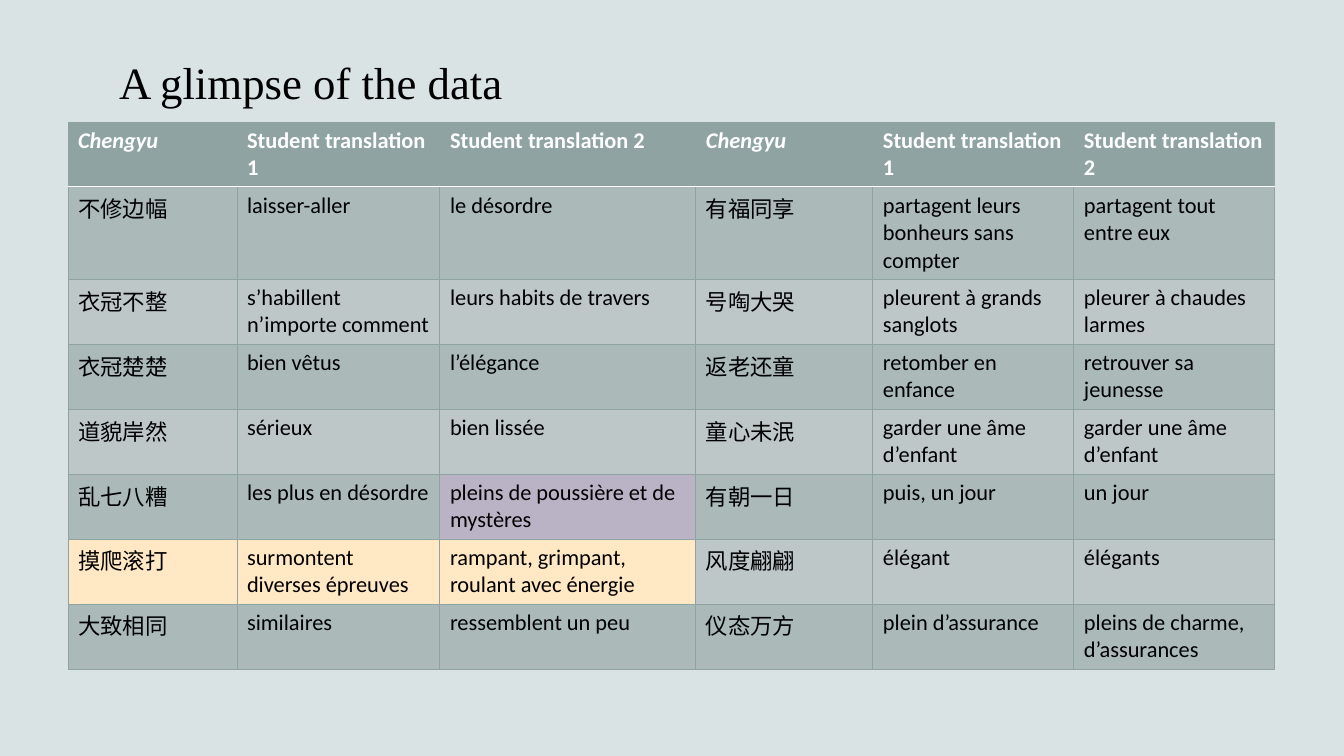
from lxml import etree
from pptx import Presentation
from pptx.dml.color import RGBColor
from pptx.enum.text import MSO_ANCHOR, PP_ALIGN
from pptx.oxml.ns import qn
from pptx.util import Pt

# Content
TITLE = "A glimpse of the data"
HEADINGS = ("Chengyu", "Student translation 1", "Student translation 2") * 2
IDIOMS = [
    ("不修边幅", "laisser-aller", "le désordre",
     "有福同享", "partagent leurs bonheurs sans compter", "partagent tout entre eux"),
    ("衣冠不整", "s’habillent n’importe comment", "leurs habits de travers",
     "号啕大哭", "pleurent à grands sanglots", "pleurer à chaudes larmes"),
    ("衣冠楚楚", "bien vêtus", "l’élégance",
     "返老还童", "retomber en enfance", "retrouver sa jeunesse"),
    ("道貌岸然", "sérieux", "bien lissée",
     "童心未泯", "garder une âme d’enfant", "garder une âme d’enfant"),
    ("乱七八糟", "les plus en désordre", "pleins de poussière et de mystères",
     "有朝一日", "puis, un jour", "un jour"),
    ("摸爬滚打", "surmontent diverses épreuves", "rampant, grimpant, roulant avec énergie",
     "风度翩翩", "élégant", "élégants"),
    ("大致相同", "similaires", "ressemblent un peu",
     "仪态万方", "plein d’assurance", "pleins de charme, d’assurances"),
]
# Highlighted cells: (row, column) -> colour
HIGHLIGHTS = {(5, 2): "purple", (6, 0): "cream", (6, 1): "cream", (6, 2): "cream"}

COLORS = {
    "page": "DAE3E3", "sage": "8FA3A3", "dark band": "ABB9B9", "light band": "BEC7C8",
    "purple": "BAB3C6", "cream": "FFE8C3", "white": "FFFFFF", "black": "000000",
}

# Layout in px
SLIDE_W, SLIDE_H = 1344, 756
TITLE_BOX = (109, 43, 1126, 123)
TITLE_INSET = 12
TABLE_LEFT, TABLE_TOP = 68, 122
COL_WIDTHS = (169, 203, 256, 177, 201, 201)
ROW_HEIGHTS = (65, 92) + (65,) * 6


def px(length):
    return round(length * 914400 / 100.8)


def color(name):
    return RGBColor.from_string(COLORS[name])


def style(run, font_name, size, color_name, bold=False, italic=False):
    font = run.font
    font.name, font.size = font_name, Pt(size)
    font.bold, font.italic = bold, italic
    font.color.rgb = color(color_name)


def add_border(cell, side, color_name, width):
    line = etree.SubElement(cell._tc.get_or_add_tcPr(), qn("a:ln" + side), w=str(Pt(width)))
    fill = etree.SubElement(line, qn("a:solidFill"))
    etree.SubElement(fill, qn("a:srgbClr"), val=COLORS[color_name])


def cell_color(row, col):
    if row == 0:
        return "sage"
    return HIGHLIGHTS.get((row, col), "dark band" if row % 2 else "light band")


def add_title(slide):
    title = slide.shapes.title
    title.left, title.top, title.width, title.height = map(px, TITLE_BOX)
    frame = title.text_frame
    frame.text = TITLE
    frame.vertical_anchor = MSO_ANCHOR.TOP
    frame.margin_top = px(TITLE_INSET)
    frame.paragraphs[0].alignment = PP_ALIGN.LEFT
    style(frame.paragraphs[0].runs[0], "Times New Roman", 32, "black")


def add_idiom_table(slide):
    rows = [HEADINGS] + IDIOMS
    table = slide.shapes.add_table(
        len(rows), len(HEADINGS), px(TABLE_LEFT), px(TABLE_TOP),
        px(sum(COL_WIDTHS)), px(sum(ROW_HEIGHTS))).table
    for column, width in zip(table.columns, COL_WIDTHS):
        column.width = px(width)
    for table_row, height in zip(table.rows, ROW_HEIGHTS):
        table_row.height = px(height)

    for r, texts in enumerate(rows):
        header = r == 0
        for c, text in enumerate(texts):
            cell = table.cell(r, c)
            cell.text = text
            style(cell.text_frame.paragraphs[0].runs[0], "Calibri", 16,
                  "white" if header else "black",
                  bold=header, italic=header and text == "Chengyu")
            # A white rule separates the header from the body
            for side in "LRTB":
                white_rule = (r, side) in ((0, "B"), (1, "T"))
                add_border(cell, side, "white" if white_rule else "sage",
                           0.85 if white_rule else 0.75)
            cell.fill.solid()
            cell.fill.fore_color.rgb = color(cell_color(r, c))


def main():
    deck = Presentation()
    deck.slide_width, deck.slide_height = px(SLIDE_W), px(SLIDE_H)
    slide = deck.slides.add_slide(deck.slide_layouts[5])
    slide.background.fill.solid()
    slide.background.fill.fore_color.rgb = color("page")
    add_title(slide)
    add_idiom_table(slide)
    deck.save("out.pptx")


if __name__ == "__main__":
    main()
